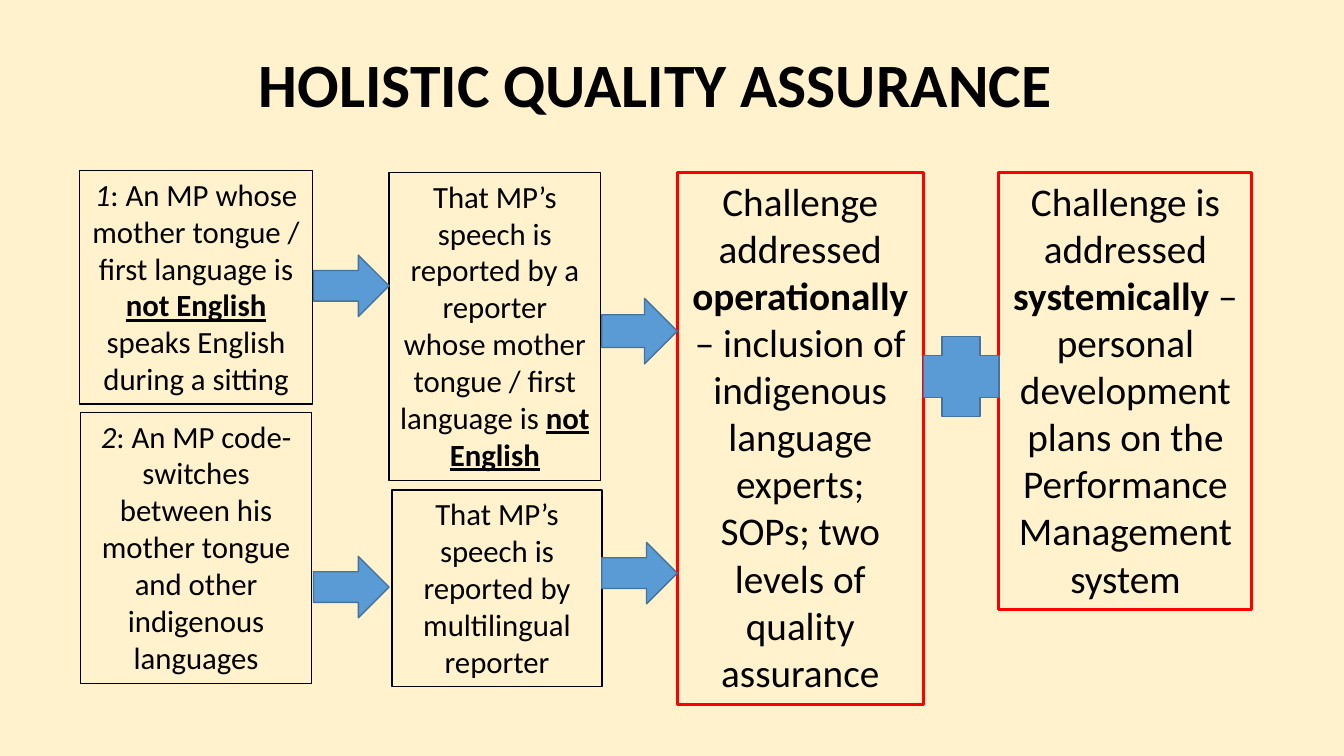
import pptx
import pptx.util
import pptx.dml.color
import pptx.enum.shapes
import pptx.enum.text

Pt = pptx.util.Pt
SHAPE = pptx.enum.shapes.MSO_SHAPE
ALIGN = pptx.enum.text.PP_ALIGN
ANCHOR = pptx.enum.text.MSO_ANCHOR
FIT = pptx.enum.text.MSO_AUTO_SIZE

COLORS = {"background": "FFF2CC", "text": "000000", "case": "000000",
          "response": "FF0000", "arrow": "5B9BD5", "arrow_edge": "43739E"}
FONT = "Calibri"
TITLE = "HOLISTIC QUALITY ASSURANCE"
TITLE_BOX = (50.4, 32.4, 835.9, 60.5)

# kind: text size, line width
KINDS = {"case": (22, 1), "response": (28, 2.25)}

# kind, (left, top, width, height), runs as (text, style letters)
BOXES = [
    ("case", (56.9, 121.7, 166.3, 167),
     [("1", "i"), (": An MP whose mother tongue / first language is ", ""),
      ("not English ", "bu"), ("speaks English during a sitting", "")]),
    ("case", (57.6, 294.5, 164.9, 193.7),
     [("2", "i"), (": An MP code-switches between his mother tongue and other "
                   "indigenous languages", "")]),
    ("case", (277.9, 123.1, 151.2, 220.3),
     [("That MP’s speech is reported by a reporter whose mother tongue / "
       "first language is ", ""), ("not English", "bu")]),
    ("case", (280.1, 349.9, 149.8, 140.4),
     [("That MP’s speech is reported by multilingual reporter", "")]),
    ("response", (483.8, 123.1, 175.7, 380.2),
     [("Challenge addressed ", ""), ("operationally", "b"),
      (" – inclusion of indigenous language experts; SOPs; two levels of "
       "quality assurance", "")]),
    ("response", (713.5, 123.1, 180.7, 312.5),
     [("Challenge is addressed ", ""), ("systemically", "b"),
      (" – personal development plans on the Performance Management system",
       "")]),
]

# shape, left, top, height; every link spans the same gap
LINK_WIDTH = 54
LINKS = [
    (SHAPE.RIGHT_ARROW, 223.9, 182.2, 43.9),
    (SHAPE.RIGHT_ARROW, 223.9, 397.4, 43.9),
    (SHAPE.RIGHT_ARROW, 429.8, 213.1, 46.8),
    (SHAPE.RIGHT_ARROW, 429.8, 387.4, 43.9),
    (SHAPE.CROSS, 659.5, 240.5, 56.9),
]


def rgb(name):
    return pptx.dml.color.RGBColor.from_string(COLORS[name])


def style_run(r, size, style):
    """Format a run; style holds any of the letters b, i and u."""
    r.font.name = FONT
    r.font.size = Pt(size)
    r.font.color.rgb = rgb("text")
    r.font.bold = "b" in style
    r.font.italic = "i" in style
    r.font.underline = "u" in style


def add_outlined(s, shape, box, line, width):
    sp = s.shapes.add_shape(shape, *map(Pt, box))
    sp.shadow.inherit = False
    sp.line.color.rgb = rgb(line)
    sp.line.width = Pt(width)
    return sp


def add_title(s):
    sp = s.shapes.title
    sp.left, sp.top, sp.width, sp.height = map(Pt, TITLE_BOX)
    tf = sp.text_frame
    tf.text = TITLE
    tf.word_wrap = True
    tf.auto_size = FIT.NONE
    tf.vertical_anchor = ANCHOR.MIDDLE
    p = tf.paragraphs[0]
    p.alignment = ALIGN.CENTER
    p.line_spacing = 0.9
    style_run(p.runs[0], 44, "b")


def add_box(s, kind, box, runs):
    size, width = KINDS[kind]
    sp = add_outlined(s, SHAPE.RECTANGLE, box, kind, width)
    sp.fill.background()
    tf = sp.text_frame
    tf.word_wrap = True
    tf.auto_size = FIT.SHAPE_TO_FIT_TEXT
    tf.vertical_anchor = ANCHOR.TOP
    p = tf.paragraphs[0]
    p.alignment = ALIGN.CENTER
    for text, style in runs:
        r = p.add_run()
        r.text = text
        style_run(r, size, style)


def main():
    prs = pptx.Presentation()
    prs.slide_width, prs.slide_height = Pt(960), Pt(540)
    s = prs.slides.add_slide(prs.slide_layouts.get_by_name("Title Only"))
    s.background.fill.solid()
    s.background.fill.fore_color.rgb = rgb("background")
    add_title(s)
    for kind, box, runs in BOXES:
        add_box(s, kind, box, runs)
    for shape, left, top, height in LINKS:
        sp = add_outlined(s, shape, (left, top, LINK_WIDTH, height),
                          "arrow_edge", 1)
        sp.fill.solid()
        sp.fill.fore_color.rgb = rgb("arrow")
    prs.save("out.pptx")


if __name__ == "__main__":
    main()
